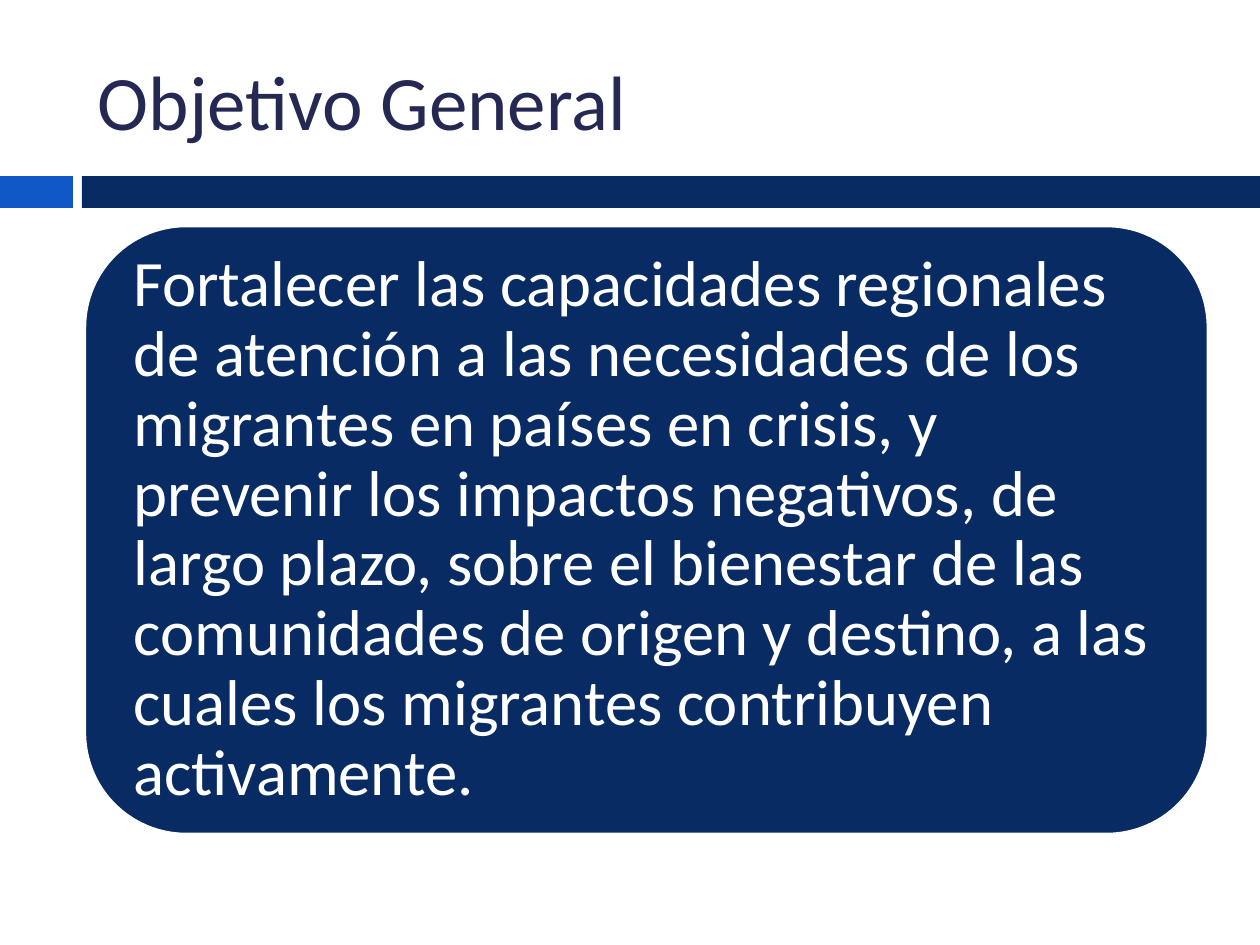
from dataclasses import dataclass

from pptx import Presentation, util as u
from pptx.dml.color import RGBColor
from pptx.enum import shapes, text

PX_PER_INCH = 126


def px(length):
    return round(length * u.Inches(1) / PX_PER_INCH)


@dataclass(frozen=True)
class Theme:
    font: str = "Calibri"
    title_size: int = 44
    body_size: int = 37
    title_color: str = "242852"
    navy: str = "072B62"
    blue: str = "0E57C4"
    white: str = "FFFFFF"


def write_text(shape, content, *, font, size, color, inset_x, inset_y, line_spacing=1.0):
    frame = shape.text_frame
    frame.word_wrap = True
    frame.auto_size = text.MSO_AUTO_SIZE.NONE
    frame.vertical_anchor = text.MSO_ANCHOR.MIDDLE
    frame.margin_left = frame.margin_right = px(inset_x)
    frame.margin_top = frame.margin_bottom = px(inset_y)
    paragraph = frame.paragraphs[0]
    paragraph.alignment = text.PP_ALIGN.LEFT
    paragraph.line_spacing = line_spacing
    run = paragraph.add_run()
    run.text = content
    run.font.name = font
    run.font.size = u.Pt(size)
    run.font.color.rgb = RGBColor.from_string(color)


class SlideBuilder:
    def __init__(self, slide, theme):
        self.slide = slide
        self.theme = theme

    def filled_shape(self, kind, left, top, width, height, fill):
        shape = self.slide.shapes.add_shape(kind, px(left), px(top), px(width), px(height))
        shape.shadow.inherit = False
        shape.fill.solid()
        shape.fill.fore_color.rgb = RGBColor.from_string(fill)
        shape.line.fill.background()
        return shape

    def bar(self, left, top, width, height, fill):
        return self.filled_shape(shapes.MSO_SHAPE.RECTANGLE, left, top, width, height, fill)

    def title(self, content, left, top, width, height):
        box = self.slide.shapes.add_textbox(px(left), px(top), px(width), px(height))
        write_text(box, content, font=self.theme.font, size=self.theme.title_size,
                   color=self.theme.title_color, inset_x=13, inset_y=6)

    def panel(self, content, left, top, width, height):
        shape = self.filled_shape(shapes.MSO_SHAPE.ROUNDED_RECTANGLE,
                                  left, top, width, height, self.theme.navy)
        shape.line.color.rgb = RGBColor.from_string(self.theme.white)
        shape.line.width = u.Pt(1.5)
        write_text(shape, content, font=self.theme.font, size=self.theme.body_size,
                   color=self.theme.white, inset_x=19, inset_y=19, line_spacing=0.9)


def main():
    slide_width, slide_height = 1260, 945
    margin, content_width = 85, 1123
    bar_top, bar_height = 176, 32
    accent_width, gap = 73, 9
    band_left = accent_width + gap

    presentation = Presentation()
    presentation.slide_width = px(slide_width)
    presentation.slide_height = px(slide_height)
    theme = Theme()
    builder = SlideBuilder(presentation.slides.add_slide(presentation.slide_layouts[6]), theme)

    builder.bar(0, bar_top, accent_width, bar_height, theme.blue)
    builder.bar(band_left, bar_top, slide_width - band_left, bar_height, theme.navy)
    builder.title("Objetivo General", margin, 32, content_width, 136)
    builder.panel(
        "Fortalecer las capacidades regionales de atención a las necesidades de los "
        "migrantes en países en crisis, y prevenir los impactos negativos, de largo "
        "plazo, sobre el bienestar de las comunidades de origen y destino, a las "
        "cuales los migrantes contribuyen activamente.",
        margin, 226, content_width, 608)

    presentation.save("out.pptx")


if __name__ == "__main__":
    main()
